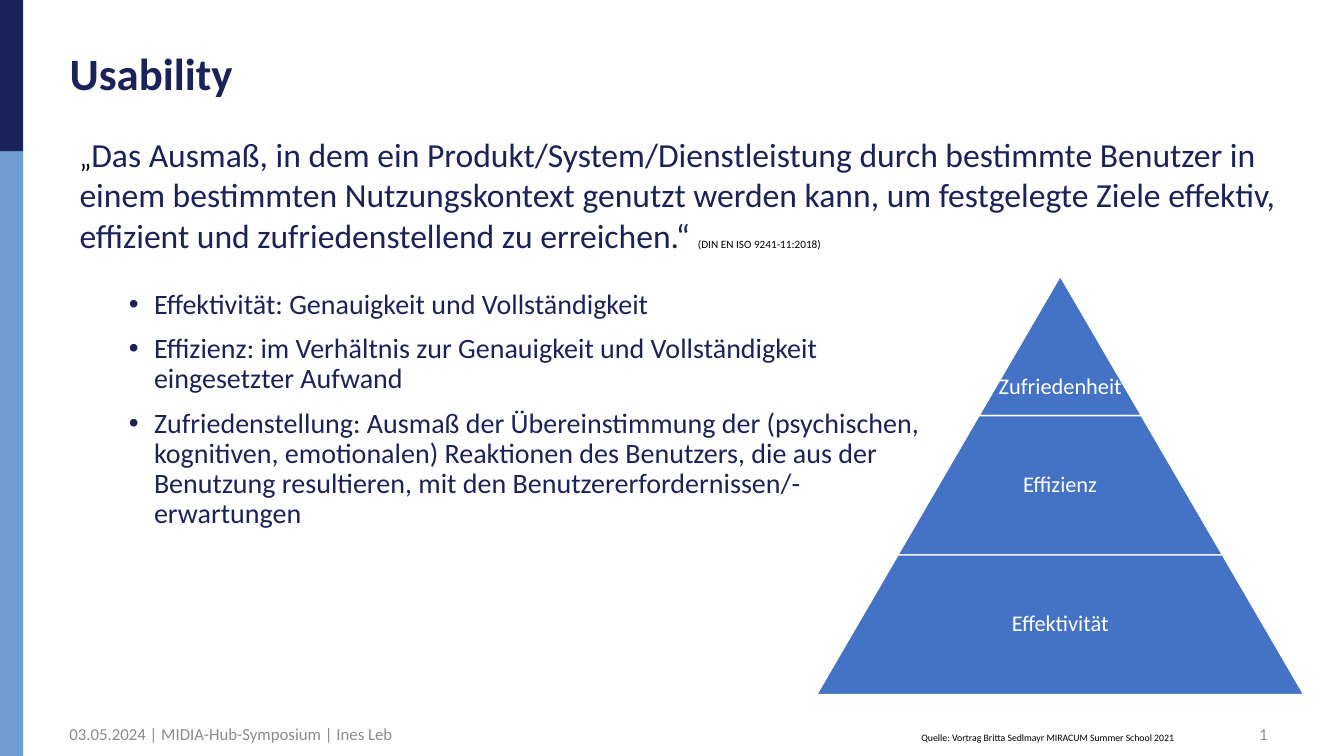
"""Build the usability slide with its quotation, criteria and pyramid."""
import pptx
import pptx.dml.color
import pptx.enum.shapes
import pptx.enum.text
import pptx.oxml.ns
import pptx.util
from lxml import etree

Pt = pptx.util.Pt
SHAPE = pptx.enum.shapes.MSO_SHAPE
ALIGN = pptx.enum.text.PP_ALIGN
ANCHOR = pptx.enum.text.MSO_ANCHOR
WIDTH, HEIGHT = pptx.util.Inches(13.33), pptx.util.Inches(7.5)
NAVY, SKY, BLUE, WHITE, BLACK, GREY = (
    "1B2259", "6F9CD1", "4472C4", "FFFFFF", "000000", "8C8C8C")

QUOTE = [
    ("„", 20, BLACK),
    ("Das Ausmaß, in dem ein Produkt/System/Dienstleistung durch bestimmte "
     "Benutzer in einem bestimmten Nutzungskontext genutzt werden kann, um "
     "festgelegte Ziele effektiv, effizient und zufriedenstellend zu "
     "erreichen.“ ", 24, NAVY),
    ("(DIN EN ISO 9241-11:2018)", 8, BLACK),
]
CRITERIA = [
    "Effektivität: Genauigkeit und Vollständigkeit",
    "Effizienz: im Verhältnis zur Genauigkeit und Vollständigkeit "
    "eingesetzter Aufwand",
    "Zufriedenstellung: Ausmaß der Übereinstimmung der (psychischen, "
    "kognitiven, emotionalen) Reaktionen des Benutzers, die aus der Benutzung "
    "resultieren, mit den Benutzererfordernissen/-erwartungen",
]
TIERS = ["Zufriedenheit", "Effizienz", "Effektivität"]


def rgb(color):
    """Turn a hex string into a colour."""
    return pptx.dml.color.RGBColor.from_string(color)


def area(left, top, width, height):
    """Turn percentages of the slide's size into lengths."""
    return [int(share * side / 100) for share, side in
            zip((left, top, width, height), (WIDTH, HEIGHT) * 2)]


def set_all(obj, **values):
    """Set several attributes of one object."""
    for name, value in values.items():
        setattr(obj, name, value)


def add_run(p, text, size, color, bold=False):
    """Append formatted text to a paragraph."""
    r = p.add_run()
    r.text = text
    set_all(r.font, name="Calibri", size=Pt(size), bold=bold)
    r.font.color.rgb = rgb(color)


def add_text(s, box, runs, anchor=ANCHOR.TOP, **paragraph):
    """Add a wrapping text box holding one paragraph."""
    tf = s.shapes.add_textbox(*area(*box)).text_frame
    set_all(tf, word_wrap=True, vertical_anchor=anchor)
    p = tf.paragraphs[0]
    set_all(p, **paragraph)
    for run in runs:
        add_run(p, *run)


def add_block(s, kind, box, fill):
    """Add a filled shape without outline."""
    sp = s.shapes.add_shape(kind, *area(*box))
    sp.shadow.inherit = False
    sp.fill.solid()
    sp.fill.fore_color.rgb = rgb(fill)
    sp.line.fill.background()
    return sp


def add_bullets(s, box, items):
    """Add a bulleted list."""
    tf = s.shapes.add_textbox(*area(*box)).text_frame
    tf.word_wrap = True
    for i, item in enumerate(items):
        p = tf.add_paragraph() if i else tf.paragraphs[0]
        pPr = p._p.get_or_add_pPr()
        set_all(p, line_spacing=0.9, space_before=Pt(10 if i else 0))
        pPr.set("marL", str(pptx.util.Inches(0.25)))
        pPr.set("indent", str(-pptx.util.Inches(0.25)))
        for tag, key, value in (("a:buFont", "typeface", "Arial"),
                                ("a:buChar", "char", "•")):
            etree.SubElement(pPr, pptx.oxml.ns.qn(tag)).set(key, value)
        add_run(p, item, 20, NAVY)


def add_pyramid(s, left, top, width, height, labels):
    """Stack trapezoids of growing width, each with a label."""
    row, step = height / len(labels), width / len(labels)
    for i, label in enumerate(labels):
        tier_width = step * (i + 1)
        box = (left + (width - tier_width) / 2, top + row * i, tier_width, row)
        sp = add_block(s, SHAPE.TRAPEZOID, box, BLUE)
        sp.adjustments[0] = step / 2 * WIDTH / (row * HEIGHT)
        sp.line.color.rgb = rgb(WHITE)
        sp.line.width = Pt(1)
        drop = 0 if i else row * 0.3
        add_text(s, (box[0], box[1] + drop, tier_width, row),
                 [(label, 16, WHITE)], ANCHOR.MIDDLE,
                 alignment=ALIGN.CENTER, line_spacing=0.9)


def set_title(s, box, text):
    """Place and format the title placeholder."""
    sp = s.shapes.title
    set_all(sp, **dict(zip(("left", "top", "width", "height"), area(*box))))
    tf = sp.text_frame
    set_all(tf, word_wrap=True, vertical_anchor=ANCHOR.MIDDLE,
            auto_size=pptx.enum.text.MSO_AUTO_SIZE.NONE)
    p = tf.paragraphs[0]
    set_all(p, alignment=ALIGN.LEFT, line_spacing=0.9)
    add_run(p, text, 32, NAVY, True)


def main():
    """Build and save the slide."""
    prs = pptx.Presentation()
    set_all(prs, slide_width=WIDTH, slide_height=HEIGHT)
    s = prs.slides.add_slide(prs.slide_layouts[5])
    add_block(s, SHAPE.RECTANGLE, (-0.08, 19.9, 1.8, 80.1), SKY)
    add_block(s, SHAPE.RECTANGLE, (-0.08, 0, 1.8, 20), NAVY)
    set_title(s, (4.43, 1.73, 87, 16.53), "Usability")
    add_bullets(s, (8.85, 37.73, 61.8, 47.73), CRITERIA)
    add_pyramid(s, 60.77, 36.53, 36.23, 55.33, TIERS)
    add_text(s, (5.18, 17.07, 90.62, 21.6), QUOTE)
    add_text(s, (67.82, 96.13, 30, 2.93),
             [("Quelle: Vortrag Britta Sedlmayr MIRACUM Summer School 2021",
               7, BLACK)])
    add_text(s, (4.43, 94.8, 60, 4.67),
             [("03.05.2024 | MIDIA-Hub-Symposium | Ines Leb", 12, GREY)],
             ANCHOR.MIDDLE)
    add_text(s, (86.12, 95.07, 8.93, 4.67), [("1", 12, GREY)],
             alignment=ALIGN.RIGHT)
    prs.save("out.pptx")


if __name__ == "__main__":
    main()
